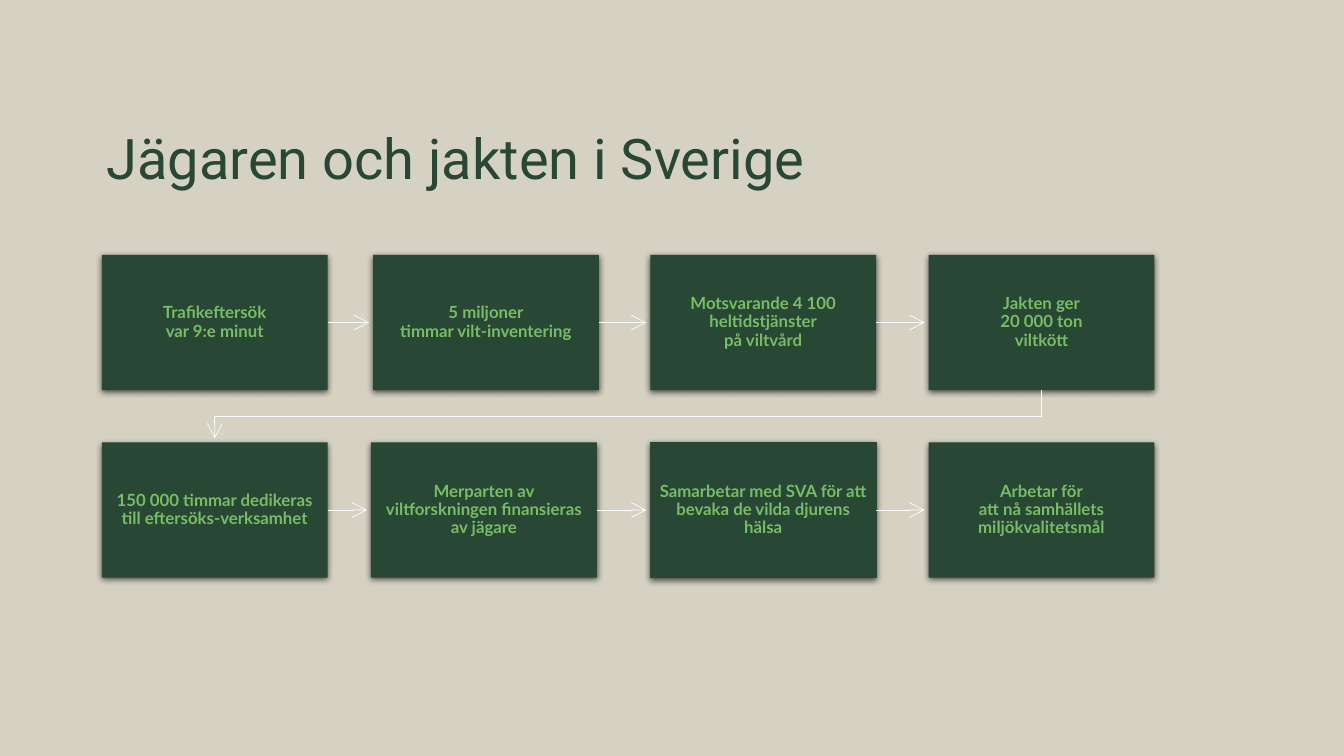
from lxml.etree import SubElement
from pptx import Presentation
from pptx.dml.color import RGBColor
from pptx.enum.shapes import MSO_CONNECTOR as Link, MSO_SHAPE as Shape
from pptx.enum.text import MSO_ANCHOR as Anchor, PP_ALIGN as Align
from pptx.oxml.ns import qn
from pptx.util import Inches, Pt

SAND = RGBColor(0xD5, 0xD1, 0xC3)
FOREST = RGBColor(0x28, 0x47, 0x34)
LEAF = RGBColor(0x79, 0xBC, 0x66)
WHITE = RGBColor(0xFF, 0xFF, 0xFF)
BLACK = "000000"

WIDE, HIGH, GAP = 2.24, 1.34, 0.04
ROWS = [
    (2.53, [
        (1.01, "Trafikeftersök\nvar 9:e minut"),
        (3.70, "5 miljoner\ntimmar vilt-inventering"),
        (6.45, "Motsvarande 4 100\nheltidstjänster\npå viltvård"),
        (9.21, "Jakten ger\n20 000 ton\nviltkött"),
    ]),
    (4.39, [
        (1.01, "150 000 timmar dedikeras till eftersöks-verksamhet"),
        (3.68, "Merparten av viltforskningen finansieras av jägare"),
        (6.45, "Samarbetar med SVA för att bevaka de vilda djurens hälsa"),
        (9.21, "Arbetar för\natt nå samhällets miljökvalitetsmål"),
    ]),
]


def add_title(slide, text):
    """Add the slide heading."""
    box = slide.shapes.add_textbox(Inches(0.96), Inches(1.02), Inches(8.27), Inches(1.14))
    frame = box.text_frame
    frame.word_wrap = True
    frame.vertical_anchor = Anchor.MIDDLE
    para = frame.paragraphs[0]
    para.text = text
    para.line_spacing = Pt(44)
    para.font.name, para.font.size = "Roboto", Pt(40)
    para.font.color.rgb = FOREST


def add_shade(shape):
    """Give a shape a soft shadow straight below it."""
    shape.shadow.inherit = False
    effects = shape.element.spPr.find(qn("a:effectLst"))
    shade = SubElement(effects, qn("a:outerShdw"), blurRad=str(Pt(4.5)),
                       dist=str(Pt(1.5)), dir="5400000", algn="ctr", rotWithShape="0")
    color = SubElement(shade, qn("a:srgbClr"), val=BLACK)
    SubElement(color, qn("a:alpha"), val="63000")


def add_card(slide, left, top, text):
    """Add a dark card with centred bold text."""
    card = slide.shapes.add_shape(
        Shape.RECTANGLE, Inches(left), Inches(top), Inches(WIDE), Inches(HIGH))
    card.fill.solid()
    card.fill.fore_color.rgb = FOREST
    card.line.fill.background()
    add_shade(card)
    frame = card.text_frame
    frame.word_wrap = True
    frame.vertical_anchor = Anchor.MIDDLE
    frame.margin_left = frame.margin_right = Inches(0.09)
    frame.margin_top = frame.margin_bottom = Inches(0.09)
    para = frame.paragraphs[0]
    para.text = text
    para.alignment = Align.CENTER
    para.line_spacing = 0.9
    para.font.name, para.font.size, para.font.bold = "Lato", Pt(12), True
    para.font.color.rgb = LEAF
    return card


def style_arrow(shape):
    """Draw a line thin and white, with an open head at its end."""
    shape.line.color.rgb = WHITE
    shape.line.width = Pt(0.5)
    props = shape.element.spPr
    SubElement(props.find(qn("a:ln")), qn("a:tailEnd"), type="arrow", w="lg", len="lg")
    SubElement(props, qn("a:effectLst"))


def add_arrow(slide, start, end, level):
    """Add a level arrow between two cards."""
    style_arrow(slide.shapes.add_connector(
        Link.STRAIGHT, Inches(start), Inches(level), Inches(end), Inches(level)))


def add_turn(slide, points):
    """Add a bent arrow through the given points."""
    first, *rest = [(Inches(x), Inches(y)) for x, y in points]
    path = slide.shapes.build_freeform(*first)
    path.add_line_segments(rest, close=False)
    turn = path.convert_to_shape()
    turn.fill.background()
    style_arrow(turn)


def main():
    """Build and save the slide."""
    deck = Presentation()
    deck.slide_width, deck.slide_height = Inches(13.33), Inches(7.5)
    slide = deck.slides.add_slide(deck.slide_layouts[6])
    slide.background.fill.solid()
    slide.background.fill.fore_color.rgb = SAND

    add_title(slide, "Jägaren och jakten i Sverige")
    cards = {}
    for top, row in ROWS:
        for left, text in row:
            cards[left, top] = add_card(slide, left, top, text)
        for (left, _), (after, _) in zip(row, row[1:]):
            add_arrow(slide, left + WIDE, after - GAP, top + HIGH / 2)

    upper, lower = ROWS[0][0], ROWS[1][0]
    edge = cards[6.45, lower].line
    edge.color.rgb = FOREST
    edge.width = Pt(0.75)

    start, end = 9.21 + WIDE / 2, 1.01 + WIDE / 2
    base = upper + HIGH
    middle = (base + lower) / 2
    add_turn(slide, [(start, base), (start, middle), (end, middle), (end, lower - GAP)])
    deck.save("out.pptx")


if __name__ == "__main__":
    main()
